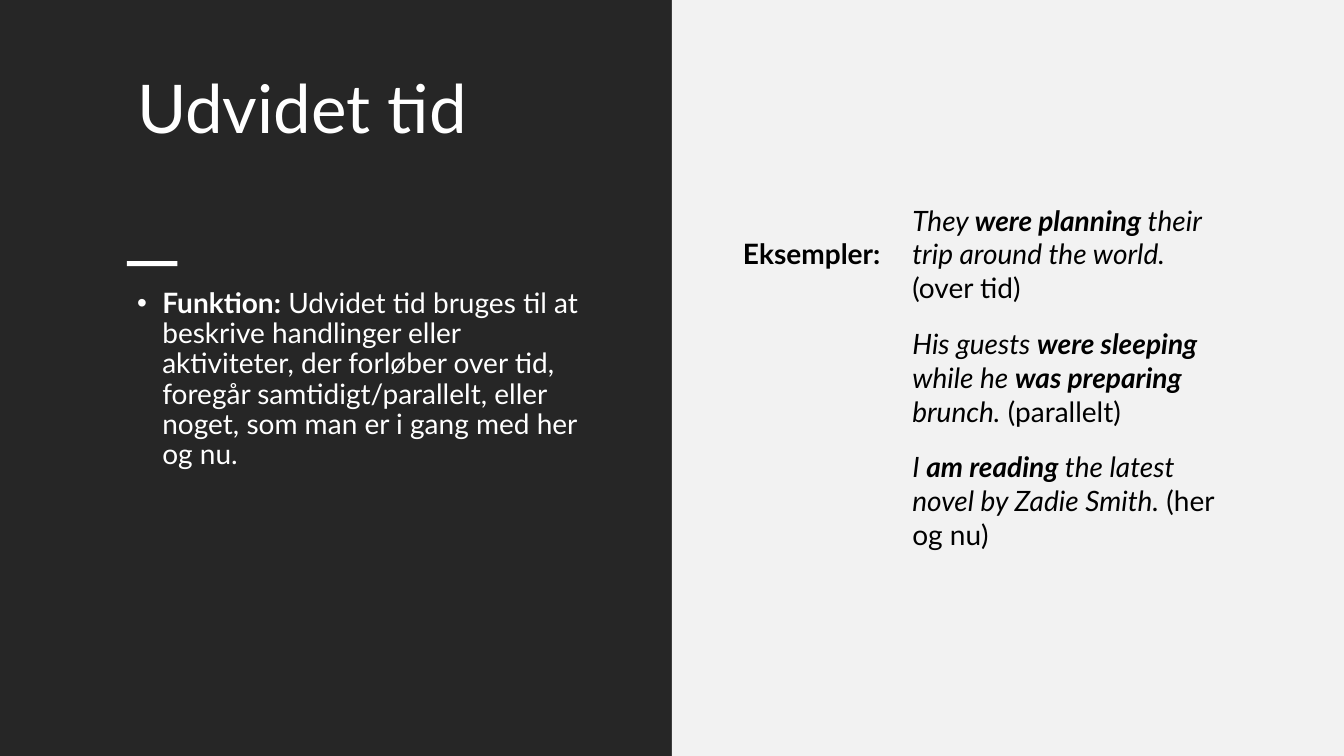
from dataclasses import dataclass

from lxml import etree
from pptx import Presentation
from pptx.dml.color import RGBColor
from pptx.enum.shapes import MSO_SHAPE
from pptx.enum.text import MSO_ANCHOR, MSO_AUTO_SIZE, PP_ALIGN
from pptx.oxml.ns import qn
from pptx.shapes.base import BaseShape
from pptx.slide import Slide
from pptx.text.text import TextFrame
from pptx.util import Inches, Pt

RECT = MSO_SHAPE.RECTANGLE
TOP, MIDDLE = MSO_ANCHOR.TOP, MSO_ANCHOR.MIDDLE
LEFT = PP_ALIGN.LEFT
NO_FIT = MSO_AUTO_SIZE.NONE
WIDE, HIGH = Inches(13.33), Inches(7.5)
FACE = "Lato"
WHITE, BLACK, DARK, PALE = "FFFFFF", "000000", "262626", "F2F2F2"
PLAIN_GRID = "{2D5ABB26-0587-4C30-8999-92F81FD0307C}"


@dataclass(frozen=True)
class Box:
    left: float
    top: float
    width: float
    height: float


@dataclass(frozen=True)
class Panel:
    box: Box
    fill: str


@dataclass(frozen=True)
class Piece:
    text: str
    bold: bool = False
    slant: bool = False


PANELS = [
    Panel(Box(0, 0, 50, 100), DARK),
    Panel(Box(9.45, 34.53, 3.75, 0.67), WHITE),
    Panel(Box(50, 0, 50, 100), PALE),
]
TITLE = Box(9.45, 9.33, 35.33, 23.73)
BODY = Box(9.45, 37.6, 35.18, 52.93)
TABLE = Box(55.28, 26.53, 35.33, 46.8)
COLUMNS = [12.6, 22.73]
ROWS = [14.13, 18.54, 14.13]

HEADING = [Piece("Udvidet tid")]
PURPOSE = [
    Piece("Funktion:", bold=True),
    Piece(" Udvidet tid bruges til at beskrive handlinger eller aktiviteter, "
          "der forløber over tid, foregår samtidigt/parallelt, eller noget, "
          "som man er i gang med her og nu."),
]
LABEL = [Piece("Eksempler:", bold=True)]
SAMPLES = [
    [Piece("They ", slant=True),
     Piece("were planning", True, True),
     Piece(" their trip around the world.", slant=True),
     Piece(" (over tid)")],
    [Piece("His guests ", slant=True),
     Piece("were sleeping", True, True),
     Piece(" while he ", slant=True),
     Piece("was preparing", True, True),
     Piece(" brunch.", slant=True),
     Piece(" (parallelt)")],
    [Piece("I ", slant=True),
     Piece("am reading", True, True),
     Piece(" the latest novel by Zadie Smith.", slant=True),
     Piece(" (her og nu)")],
]


def across(share: float) -> int:
    return round(WIDE * share / 100)


def down(share: float) -> int:
    return round(HIGH * share / 100)


def place(box: Box) -> tuple[int, int, int, int]:
    return across(box.left), down(box.top), across(box.width), down(box.height)


def color(code: str) -> RGBColor:
    return RGBColor.from_string(code)


def write(frame: TextFrame, pieces: list[Piece], size: int, ink: str) -> None:
    line = frame.paragraphs[0]
    line.alignment = LEFT
    line.space_before = Pt(0)
    for piece in pieces:
        run = line.add_run()
        run.text = piece.text
        font = run.font
        font.name, font.size = FACE, Pt(size)
        font.bold, font.italic = piece.bold, piece.slant
        font.color.rgb = color(ink)


def draw_panel(slide: Slide, panel: Panel) -> None:
    shape = slide.shapes.add_shape(RECT, *place(panel.box))
    shape.shadow.inherit = False
    shape.fill.solid()
    shape.fill.fore_color.rgb = color(panel.fill)
    shape.line.fill.background()
    slide.shapes.title._element.addprevious(shape._element)


def fill_holder(holder: BaseShape, box: Box, pieces: list[Piece], size: int) -> None:
    holder.left, holder.top, holder.width, holder.height = place(box)
    frame = holder.text_frame
    frame.word_wrap = True
    frame.auto_size = NO_FIT
    frame.vertical_anchor = TOP
    write(frame, pieces, size, WHITE)
    frame.paragraphs[0].line_spacing = 0.9


def add_bullet(frame: TextFrame) -> None:
    props = frame.paragraphs[0]._p.get_or_add_pPr()
    props.set("marL", str(Inches(0.25)))
    props.set("indent", str(Inches(-0.25)))
    etree.SubElement(props, qn("a:buFont")).set("typeface", "Arial")
    etree.SubElement(props, qn("a:buChar")).set("char", "•")


def draw_table(slide: Slide) -> None:
    frame = slide.shapes.add_table(len(ROWS), len(COLUMNS), *place(TABLE))
    table = frame.table
    table.first_row = table.horz_banding = False
    table._tbl.tblPr.find(qn("a:tableStyleId")).text = PLAIN_GRID
    for column, share in zip(table.columns, COLUMNS):
        column.width = across(share)
    for row, share in zip(table.rows, ROWS):
        row.height = down(share)
    for cell in table.iter_cells():
        cell.fill.background()
        cell.vertical_anchor = MIDDLE
        cell.margin_left = cell.margin_right = 0
        cell.margin_top = cell.margin_bottom = 0
    write(table.cell(0, 0).text_frame, LABEL, 20, BLACK)
    for index, sample in enumerate(SAMPLES):
        write(table.cell(index, 1).text_frame, sample, 20, BLACK)


def main() -> None:
    deck = Presentation()
    deck.slide_width, deck.slide_height = WIDE, HIGH
    slide = deck.slides.add_slide(deck.slide_layouts[1])
    for panel in PANELS:
        draw_panel(slide, panel)
    body = slide.placeholders[1]
    add_bullet(body.text_frame)
    fill_holder(slide.shapes.title, TITLE, HEADING, 48)
    fill_holder(body, BODY, PURPOSE, 20)
    draw_table(slide)
    deck.save("out.pptx")


if __name__ == "__main__":
    main()
